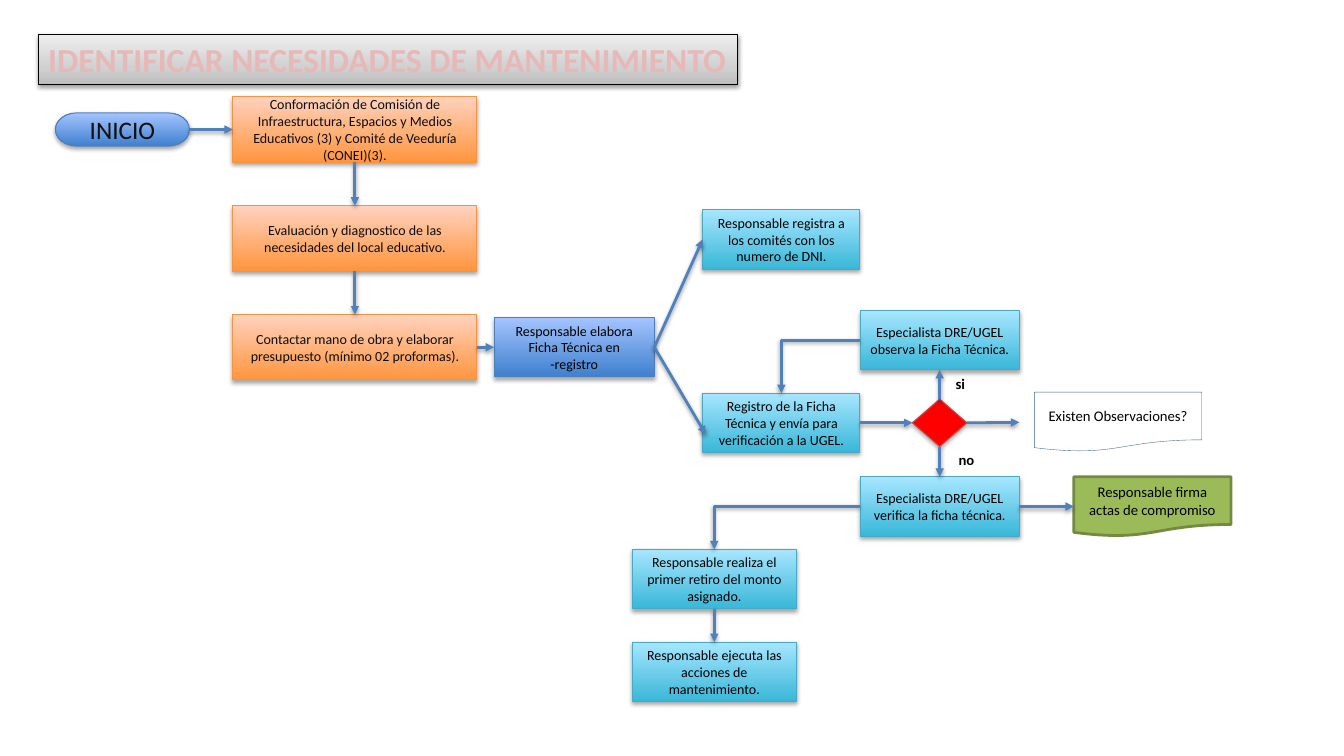
from dataclasses import dataclass

from lxml.etree import SubElement
from pptx import Presentation
from pptx.dml.color import RGBColor
from pptx.enum.shapes import MSO_CONNECTOR as Link, MSO_SHAPE as Shape
from pptx.enum.text import MSO_ANCHOR as Anchor, MSO_AUTO_SIZE as AutoSize, PP_ALIGN as Align
from pptx.oxml.ns import qn
from pptx.util import Pt

PX = 9144  # 100 px to the inch
TOP, LEFT, BOTTOM, RIGHT = range(4)


@dataclass(frozen=True)
class Theme:
    font: str = "Calibri"
    title_size: float = 24
    start_size: float = 18
    box_size: float = 10
    note_size: float = 10.5
    ink: str = "000000"
    soft_ink: str = "0D0D0D"
    title_ink: str = "E6B9B8"
    title_outline: str = "C0504D"
    arrow: str = "4F81BD"
    # Fills run from the bottom up, as (position, colour) stops
    grey: tuple = ((0, "BDBDBD"), (35, "D1D1D1"), (100, "EEEEEE"))
    blue: tuple = ((0, "3F80CE"), (100, "A4C4FF"))
    orange: tuple = ((0, "FF953E"), (100, "FFD2BD"))
    aqua: tuple = ((0, "39B7D8"), (100, "A7E6FF"))
    red: str = "FF0000"
    green: str = "9BBB59"
    blue_edge: str = "4B7EBC"
    orange_edge: str = "F69240"
    aqua_edge: str = "46AAC5"
    red_edge: str = "BF4C48"
    green_edge: str = "738A42"
    note_edge: str = "376092"


class FlowPage:
    def __init__(self, page, theme):
        self.page = page
        self.theme = theme

    def apply(self, target, values):
        for name, value in values.items():
            setattr(target, name, value)

    def colour_node(self, parent, colour):
        return SubElement(parent, qn("a:srgbClr"), val=colour)

    def shadow(self, effects, opacity, distance):
        outer = SubElement(effects, qn("a:outerShdw"), blurRad="40000", dist=str(distance),
                           dir="5400000", rotWithShape="0")
        SubElement(self.colour_node(outer, self.theme.ink), qn("a:alpha"), val=str(opacity * 1000))

    def paint(self, shape, fill):
        if fill is None:
            shape.fill.background()
        elif isinstance(fill, str):
            shape.fill.solid()
            shape.fill.fore_color.rgb = RGBColor.from_string(fill)
        else:
            shape.fill.gradient()
            shape.fill.gradient_angle = 90
            stops = shape._element.spPr.find(".//" + qn("a:gsLst"))
            stops.clear()
            for position, colour in fill:
                self.colour_node(SubElement(stops, qn("a:gs"), pos=str(position * 1000)), colour)

    def add_text(self, shape, text, size, ink, align, bold=False, **frame_format):
        frame = shape.text_frame
        self.apply(frame, {"word_wrap": True, **frame_format})
        para = frame.paragraphs[0]
        para.alignment = align
        span = para.add_run()
        span.text = text
        self.apply(span.font, {"name": self.theme.font, "size": Pt(size), "bold": bold})
        span.font.color.rgb = RGBColor.from_string(ink)
        return span

    def box(self, kind, place, fill, edge, edge_width=0.75, shadow=(35, 23000)):
        shape = self.page.shapes.add_shape(kind, *(n * PX for n in place))
        shape.shadow.inherit = False
        self.paint(shape, fill)
        shape.line.color.rgb = RGBColor.from_string(edge)
        shape.line.width = Pt(edge_width)
        if shadow:
            self.shadow(shape._element.spPr.find(qn("a:effectLst")), *shadow)
        return shape

    def step(self, text, place, fill, edge, kind=Shape.RECTANGLE, size=None, ink=None, **look):
        shape = self.box(kind, place, fill, edge, **look)
        self.add_text(shape, text, size or self.theme.box_size, ink or self.theme.ink,
                      Align.CENTER, vertical_anchor=Anchor.MIDDLE)
        return shape

    def title(self, text, place):
        theme = self.theme
        shape = self.box(Shape.RECTANGLE, place, theme.grey, theme.ink, shadow=(38, 20000))
        span = self.add_text(shape, text, theme.title_size, theme.title_ink, Align.LEFT, bold=True,
                             word_wrap=False, auto_size=AutoSize.SHAPE_TO_FIT_TEXT,
                             vertical_anchor=Anchor.TOP)
        props = span._r.get_or_add_rPr()
        outline = SubElement(props, qn("a:ln"), w=str(int(Pt(1.75))))
        self.colour_node(SubElement(outline, qn("a:solidFill")), theme.title_outline)
        props.insert(0, outline)

    def label(self, text, place):
        shape = self.page.shapes.add_textbox(*(n * PX for n in place))
        self.add_text(shape, text, self.theme.note_size, self.theme.ink, Align.LEFT, bold=True,
                      auto_size=AutoSize.SHAPE_TO_FIT_TEXT)

    def style_arrow(self, link):
        link.line.color.rgb = RGBColor.from_string(self.theme.arrow)
        link.line.width = Pt(2)
        properties = link._element.spPr
        SubElement(properties.find(qn("a:ln")), qn("a:tailEnd"), type="triangle")
        self.shadow(SubElement(properties, qn("a:effectLst")), 38, 20000)

    def arrow(self, source, source_side, target=None, target_side=None, free_end=(0, 0)):
        x, y = (n * PX for n in free_end)
        link = self.page.shapes.add_connector(Link.STRAIGHT, x, y, x, y)
        link.begin_connect(source, source_side)
        if target is not None:
            link.end_connect(target, target_side)
        self.style_arrow(link)

    def elbow(self, source, target):
        """Leave the left side of source and come down onto the top of target."""
        link = self.page.shapes.add_connector(
            Link.ELBOW, source.left, source.top + source.height // 2,
            target.left + target.width // 2, target.top)
        link._element.spPr.find(qn("a:prstGeom")).set("prst", "bentConnector2")
        self.style_arrow(link)


def main():
    deck = Presentation()
    deck.slide_width, deck.slide_height = 1333 * PX, 750 * PX
    theme = Theme()
    flow = FlowPage(deck.slides.add_slide(deck.slide_layouts[6]), theme)

    # Title and start
    flow.title("IDENTIFICAR NECESIDADES DE MANTENIMIENTO", (38, 34, 694, 50))
    start = flow.step("INICIO", (55, 112, 133, 33), theme.blue, theme.blue_edge,
                      Shape.FLOWCHART_TERMINATOR, theme.start_size, theme.soft_ink)

    # Preparation column
    preparation = [
        "Conformación de Comisión de Infraestructura, Espacios y Medios Educativos (3) "
        "y Comité de Veeduría (CONEI)(3).",
        "Evaluación y diagnostico de las necesidades del local educativo.",
        "Contactar mano de obra y elaborar presupuesto (mínimo 02 proformas).",
    ]
    committee, diagnosis, budget = [
        flow.step(text, (231, 96 + 108 * row, 242, 65), theme.orange, theme.orange_edge,
                  ink=theme.soft_ink)
        for row, text in enumerate(preparation)]

    # Technical sheet steps
    sheet = flow.step("Responsable elabora Ficha Técnica en -registro", (490, 315, 159, 59),
                      theme.blue, theme.blue_edge)
    aqua_steps = [
        ("Responsable registra a los comités con los numero de DNI.", 697, 208, 156),
        ("Registro de la Ficha Técnica y envía para verificación a la UGEL.", 697, 390, 156),
        ("Especialista DRE/UGEL observa la Ficha Técnica.", 853, 308, 158),
        ("Especialista DRE/UGEL verifica la ficha técnica.", 853, 473, 158),
        ("Responsable realiza el primer retiro del monto asignado.", 627, 545, 163),
        ("Responsable ejecuta las acciones de mantenimiento.", 627, 637, 163),
    ]
    members, submission, observed, verified, withdrawal, works = [
        flow.step(text, (x, y, width, 59), theme.aqua, theme.aqua_edge)
        for text, x, y, width in aqua_steps]

    # Decision and documents
    decision = flow.box(Shape.DIAMOND, (905, 396, 54, 47), theme.red, theme.red_edge)
    signing = flow.step("Responsable firma actas de compromiso", (1065, 473, 156, 59),
                        theme.green, theme.green_edge, Shape.FLOWCHART_DOCUMENT,
                        theme.note_size, edge_width=2, shadow=None)
    flow.step("Existen Observaciones?", (1026, 389, 166, 59), None, theme.note_edge,
              Shape.FLOWCHART_DOCUMENT, theme.note_size, edge_width=0.25, shadow=None)
    flow.label("si", (938, 367, 41, 28))
    flow.label("no", (941, 442, 41, 28))

    # Arrows
    for ends in [
        (start, RIGHT, committee, LEFT),
        (committee, BOTTOM, diagnosis, TOP),
        (diagnosis, BOTTOM, budget, TOP),
        (budget, RIGHT, sheet, LEFT),
        (sheet, RIGHT, members, LEFT),
        (submission, RIGHT, decision, LEFT),
        (decision, TOP, observed, BOTTOM),
        (decision, BOTTOM, verified, TOP),
        (verified, RIGHT, signing, LEFT),
        (withdrawal, BOTTOM, works, TOP),
    ]:
        flow.arrow(*ends)
    flow.arrow(sheet, RIGHT, free_end=(700, 431))
    flow.arrow(decision, RIGHT, free_end=(1011, 419))
    flow.elbow(observed, submission)
    flow.elbow(verified, withdrawal)

    deck.save("out.pptx")


if __name__ == "__main__":
    main()
